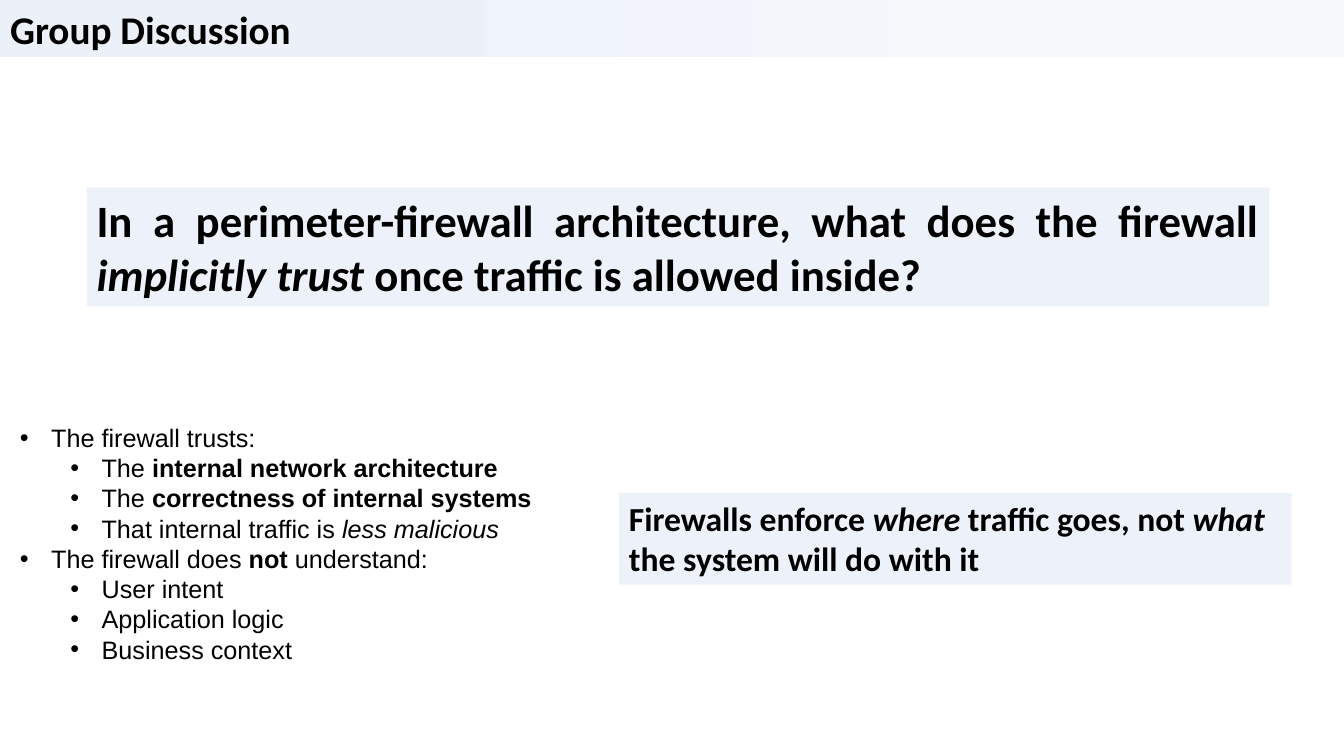
import pptx
import pptx.dml.color
import pptx.enum.shapes
import pptx.enum.text
import pptx.oxml
import pptx.oxml.ns
import pptx.util

Inches = pptx.util.Inches
RGBColor = pptx.dml.color.RGBColor
ALIGN = pptx.enum.text.PP_ALIGN
ANCHOR = pptx.enum.text.MSO_ANCHOR

BLACK = RGBColor(0x00, 0x00, 0x00)
PANEL_BLUE = RGBColor(0xED, 0xF2, 0xFA)
BAR_BLUE = RGBColor(0xEC, 0xF1, 0xF9)
BAR_PALE = RGBColor(0xF6, 0xF8, 0xFC)

HEADING_FONT = {"name": "Calibri", "bold": True}
BODY_FONT = {"name": "Arial", "size": pptx.util.Pt(18)}


def add_spans(para, spans, font):
    """Add (text, changes) spans, each with the shared font values plus its changes."""
    for text, changes in spans:
        span = para.add_run()
        span.text = text
        span.font.color.rgb = BLACK
        for name, value in {**font, **changes}.items():
            setattr(span.font, name, value)


def add_bullet(para, indent):
    properties = para._p.get_or_add_pPr()
    properties.set("marL", str(Inches(indent)))
    properties.set("indent", str(Inches(-0.31)))
    namespace = pptx.oxml.ns.nsdecls("a")
    for tag in ('<a:buFont {} typeface="Arial"/>', '<a:buChar {} char="•"/>'):
        properties.append(pptx.oxml.parse_xml(tag.format(namespace)))


deck = pptx.Presentation()
deck.slide_width = Inches(13.33)
deck.slide_height = Inches(7.5)
slide = deck.slides.add_slide(deck.slide_layouts[5])

# Title bar
title = slide.shapes.title
title.left, title.top = Inches(0), Inches(0)
title.width, title.height = Inches(13.33), Inches(0.57)
title.fill.gradient()
title.fill.gradient_angle = 0
for stop, position, color in zip(title.fill.gradient_stops, (0.26, 0.76), (BAR_BLUE, BAR_PALE)):
    stop.position = position
    stop.color.rgb = color
title.text_frame.auto_size = pptx.enum.text.MSO_AUTO_SIZE.NONE
title.text_frame.vertical_anchor = ANCHOR.MIDDLE
title_para = title.text_frame.paragraphs[0]
title_para.alignment = ALIGN.LEFT
add_spans(title_para, [("Group Discussion", {})], {**HEADING_FONT, "size": pptx.util.Pt(28)})

# Question and takeaway panels
italic = {"italic": True}
panels = [
    ((0.86, 1.86, 11.73, 1.18), 32, ALIGN.JUSTIFY, [
        ("In a perimeter-firewall architecture, what does the firewall ", {}),
        ("implicitly trust", italic),
        (" once traffic is allowed inside?", {}),
    ]),
    ((6.14, 4.89, 6.67, 0.91), 24, ALIGN.LEFT, [
        ("Firewalls enforce ", {}),
        ("where", italic),
        (" traffic goes, not ", {}),
        ("what", italic),
        (" the system will do with it", {}),
    ]),
]
for place, size, alignment, spans in panels:
    panel = slide.shapes.add_shape(
        pptx.enum.shapes.MSO_SHAPE.RECTANGLE, *[Inches(value) for value in place])
    panel.shadow.inherit = False
    panel.fill.solid()
    panel.fill.fore_color.rgb = PANEL_BLUE
    panel.line.fill.background()
    panel.text_frame.word_wrap = True
    panel.text_frame.vertical_anchor = ANCHOR.TOP
    para = panel.text_frame.paragraphs[0]
    para.alignment = alignment
    add_spans(para, spans, {**HEADING_FONT, "size": pptx.util.Pt(size)})

# Answer list
bold = {"bold": True}
answers = [
    (0, [("The firewall trusts:", {})]),
    (1, [("The ", {}), ("internal network architecture", bold)]),
    (1, [("The ", {}), ("correctness of internal systems", bold)]),
    (1, [("That internal traffic is ", {}), ("less malicious", italic)]),
    (0, [("The firewall does ", {}), ("not", bold), (" understand:", {})]),
    (1, [("User intent", {})]),
    (1, [("Application logic", {})]),
    (1, [("Business context", {})]),
]
answer_box = slide.shapes.add_textbox(Inches(0.1), Inches(4.14), Inches(5.33), Inches(2.83))
frame = answer_box.text_frame
frame.word_wrap = True
frame.margin_right = Inches(0)
frame.vertical_anchor = ANCHOR.TOP
for index, (level, spans) in enumerate(answers):
    para = frame.add_paragraph() if index else frame.paragraphs[0]
    para.level = level
    add_bullet(para, 0.31 + 0.5 * level)
    add_spans(para, spans, BODY_FONT)

deck.save("out.pptx")
